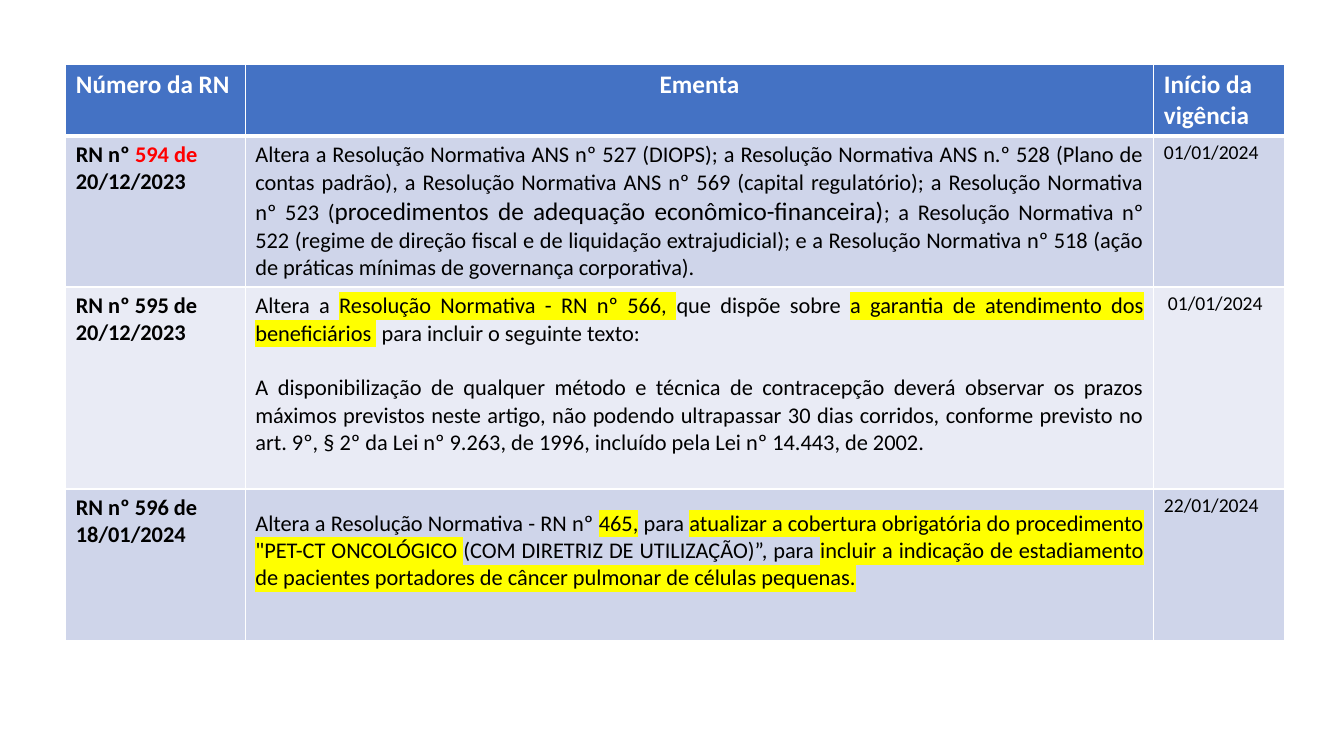
from dataclasses import dataclass

from lxml import etree
from pptx import Presentation, util as u
from pptx.dml.color import RGBColor
from pptx.enum import text
from pptx.oxml.ns import qn


@dataclass(frozen=True)
class Theme:
    font: str = "Calibri"
    header_fill: str = "4472C4"
    bands: tuple = ("CFD5EA", "E9EBF5")
    ink: str = "000000"
    white: str = "FFFFFF"
    alert: str = "FF0000"
    marker: str = "FFFF00"
    heading: int = 18
    body: int = 16
    small: int = 14
    rule: int = 1
    header_rule: int = 3


THEME = Theme()
LEFT, MIDDLE_COL, JUSTIFY = text.PP_ALIGN.LEFT, text.PP_ALIGN.CENTER, text.PP_ALIGN.JUSTIFY
TOP, MIDDLE = text.MSO_ANCHOR.TOP, text.MSO_ANCHOR.MIDDLE


def add_text(paragraph, content, size=THEME.body, color=THEME.ink, bold=False, marker=None):
    run = paragraph.add_run()
    run.text = content
    run.font.size = u.Pt(size)
    run.font.bold = bold
    run.font.color.rgb = RGBColor.from_string(color)
    if marker:
        highlight = etree.SubElement(run.font._element, qn("a:highlight"))
        etree.SubElement(highlight, qn("a:srgbClr"), val=marker)
    run.font.name = THEME.font


def marked(content):
    return content, {"marker": THEME.marker}


class Deck:
    def __init__(self, theme):
        self.theme = theme
        self.prs = Presentation()
        self.prs.slide_width, self.prs.slide_height = u.Inches(13.33), u.Inches(7.5)
        self.slide = self.prs.slides.add_slide(self.prs.slide_layouts[6])

    def x(self, percent):
        return int(self.prs.slide_width * percent / 100)

    def y(self, percent):
        return int(self.prs.slide_height * percent / 100)

    def table(self, left, top, columns, rows):
        """Add an empty table; every length is a percentage of the slide."""
        table = self.slide.shapes.add_table(
            len(rows), len(columns), self.x(left), self.y(top),
            self.x(sum(columns)), self.y(sum(rows))).table
        for column, width in zip(table.columns, columns):
            column.width = self.x(width)
        for row, height in zip(table.rows, rows):
            row.height = self.y(height)
        return table

    def borders(self, cell, **widths):
        for side in ("lnL", "lnR", "lnT", "lnB"):
            width = widths.get(side, self.theme.rule)
            line = etree.SubElement(cell._tc.get_or_add_tcPr(), qn(f"a:{side}"), w=str(u.Pt(width)))
            fill = etree.SubElement(line, qn("a:solidFill"))
            etree.SubElement(fill, qn("a:srgbClr"), val=self.theme.white)

    def cell(self, cell, paragraphs, fill, align=LEFT, anchor=TOP, gap=19.5, **style):
        """Fill a cell; each paragraph is a list of strings or (string, format) pairs."""
        cell.fill.solid()
        cell.fill.fore_color.rgb = RGBColor.from_string(fill)
        cell.vertical_anchor = anchor
        for index, pieces in enumerate(paragraphs):
            paragraph = cell.text_frame.paragraphs[0] if index == 0 else cell.text_frame.add_paragraph()
            paragraph.alignment = align
            if index:
                paragraph.space_before = u.Pt(gap)
            for piece in pieces:
                content, extra = (piece, {}) if isinstance(piece, str) else piece
                add_text(paragraph, content, **{**style, **extra})

    def save(self):
        self.prs.save("out.pptx")


HEADINGS = [("Número da RN", LEFT), ("Ementa", MIDDLE_COL), ("Início da vigência", LEFT)]

# Number, summary paragraphs, start date, bottom margin of the summary, left margin of the date
RESOLUTIONS = [
    (["RN nº ", ("594 de ", {"color": THEME.alert}), "20/12/2023"],
     [["Altera a Resolução Normativa ANS nº 527 (DIOPS); a Resolução Normativa ANS n.º 528 "
       "(Plano de contas padrão), a Resolução Normativa ANS nº 569 (capital regulatório); "
       "a Resolução Normativa nº 523 (",
       ("procedimentos de adequação econômico-financeira)", {"size": THEME.heading}),
       "; a Resolução Normativa nº 522 (regime de direção fiscal e de liquidação extrajudicial); "
       "e a Resolução Normativa nº 518 (ação de práticas mínimas de governança corporativa)."]],
     "01/01/2024", 0.05, 0.1),
    (["RN nº 595 de 20/12/2023"],
     [["Altera a ", marked("Resolução Normativa - RN nº 566, "), "que dispõe sobre ",
       marked("a garantia de atendimento dos beneficiários "), " para incluir o seguinte texto:"],
      ["A disponibilização de qualquer método e técnica de contracepção deverá observar os prazos "
       "máximos previstos neste artigo, não podendo ultrapassar 30 dias corridos, conforme previsto "
       "no art. 9º, § 2º da Lei nº 9.263, de 1996, incluído pela Lei nº 14.443, de 2002."]],
     "01/01/2024", 0.32, 0.14),
    (["RN nº 596 de 18/01/2024"],
     [["Altera a Resolução Normativa - RN nº ", marked("465,"), " para ",
       marked('atualizar a cobertura obrigatória do procedimento "PET-CT ONCOLÓGICO '),
       "(COM DIRETRIZ DE UTILIZAÇÃO)”, para ",
       marked("incluir a indicação de estadiamento de pacientes portadores de câncer pulmonar "
              "de células pequenas.")]],
     "22/01/2024", 0.32, 0.1),
]


def main():
    deck = Deck(THEME)
    resolutions = deck.table(4.9, 8.5, columns=(13.35, 67.6, 9.75), rows=(9.4, 20, 26.7, 20))

    for column, (heading, align) in enumerate(HEADINGS):
        header = resolutions.cell(0, column)
        deck.borders(header, lnB=THEME.header_rule)
        deck.cell(header, [[heading]], THEME.header_fill, align=align,
                  size=THEME.heading, color=THEME.white, bold=True)

    for index, (name, summary, start, bottom, indent) in enumerate(RESOLUTIONS):
        band = THEME.bands[index % 2]
        number, ementa, date = resolutions.rows[index + 1].cells
        for cell in (number, ementa, date):
            deck.borders(cell, lnT=THEME.rule if index else THEME.header_rule)
        deck.cell(number, [name], band, bold=True)
        deck.cell(ementa, summary, band, align=JUSTIFY, anchor=MIDDLE)
        deck.cell(date, [[start]], band, size=THEME.small)
        ementa.margin_bottom = u.Inches(bottom)
        date.margin_left = u.Inches(indent)

    deck.save()


if __name__ == "__main__":
    main()
